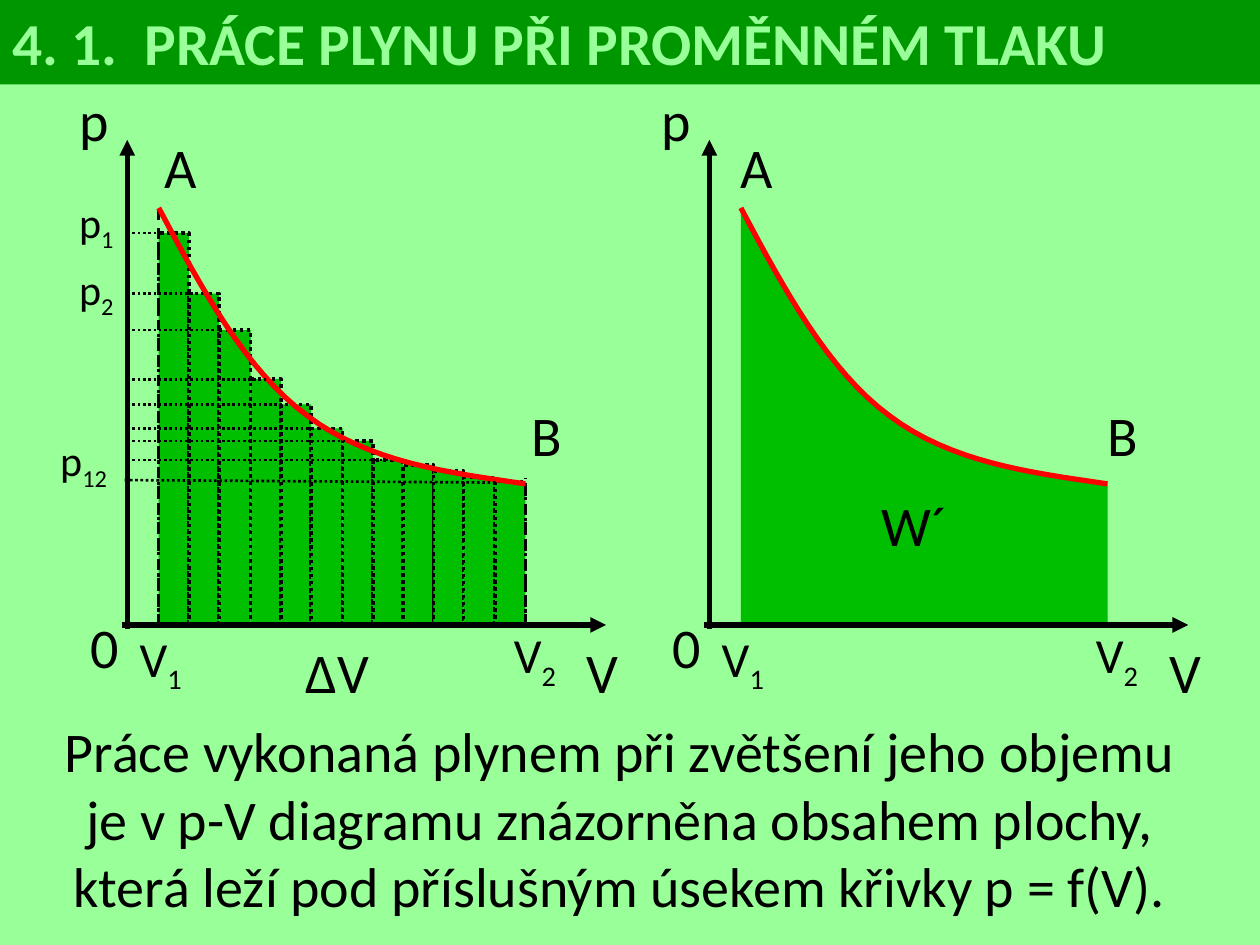
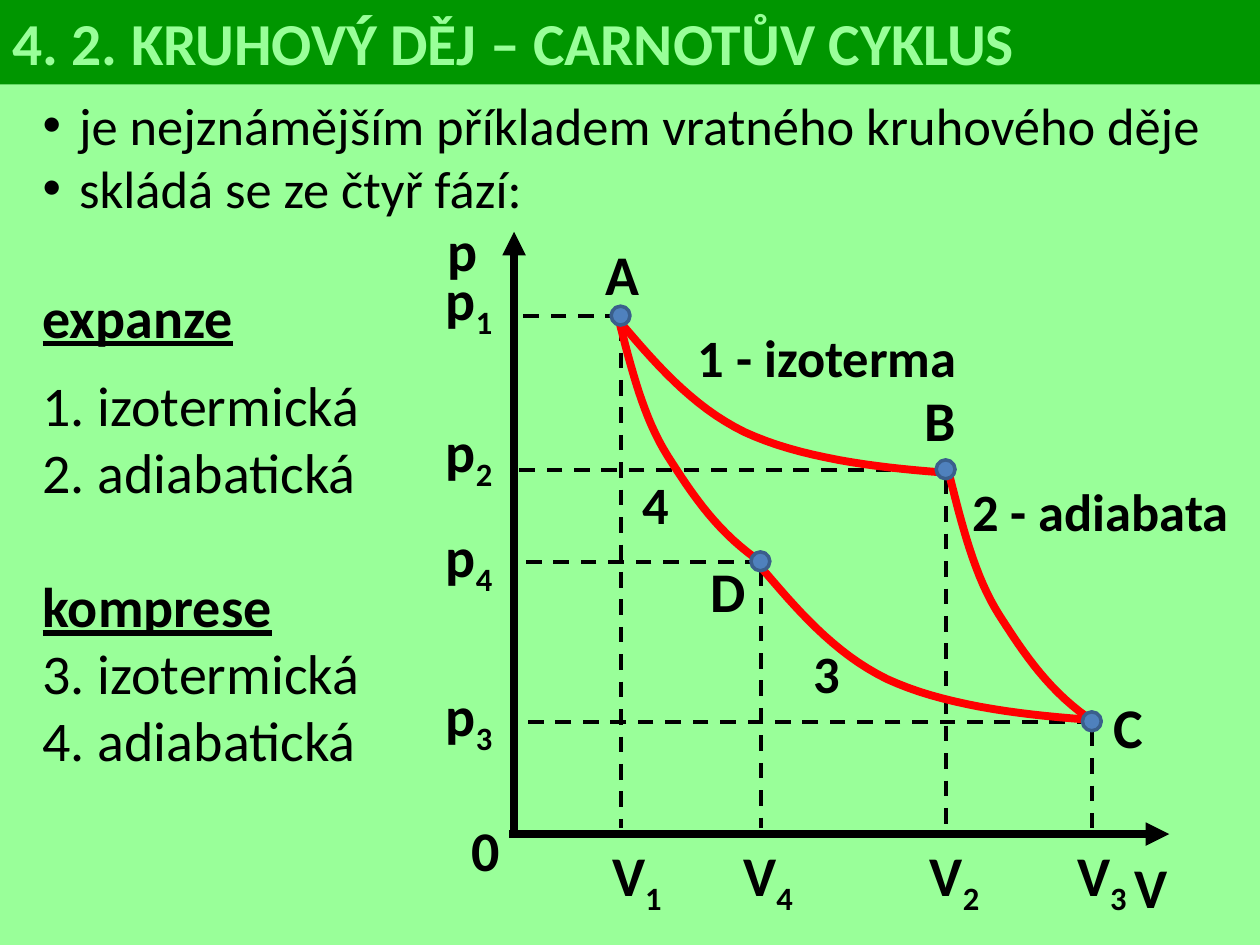
from dataclasses import dataclass

from lxml import etree
from pptx import Presentation
from pptx import util as u
from pptx.dml.color import RGBColor
from pptx.enum import dml, shapes, text
from pptx.oxml.ns import qn

PX = 9144  # EMU in one px; a page is 1000 x 750 px
Point = tuple[int, int]


@dataclass(frozen=True)
class Theme:
    font: str = "Calibri"
    page: str = "99FF99"
    band: str = "009600"
    ink: str = "000000"
    area: str = "00BE00"
    curve: str = "FF0000"
    dot: str = "4F81BD"
    dot_edge: str = "3A5F8C"
    title: int = 34
    body: int = 32
    note: int = 30
    volume: int = 28
    pressure: int = 24


@dataclass(frozen=True)
class Label:
    text: str
    x: int
    y: int
    width: int = 54
    sub: str = ""
    size: int = 32
    bold: bool = False


@dataclass(frozen=True)
class Stroke:
    color: str
    width: float
    dash: dml.MSO_LINE | None = None
    arrow: bool = False


@dataclass(frozen=True)
class Item:
    text: str
    size: int = 32
    heading: bool = False
    bullet: bool = False
    gap: int = 0


@dataclass(frozen=True)
class State:
    """A corner of the cycle, with the places of its labels."""
    name: str
    sub: str
    x: int
    y: int
    name_at: Point
    volume_x: int
    pressure_y: int


THEME = Theme()
DOTTED = dml.MSO_LINE.ROUND_DOT
DASHED = dml.MSO_LINE.DASH

# Bézier points, relative to the start of each curve
EXPANSION = [(0, 0), (34, 64), (69, 129), (118, 165), (167, 202), (229, 210), (291, 219)]
ISOTHERM = [(0, 0), (30, 35), (59, 70), (102, 91), (145, 111), (204, 119), (259, 123)]
ADIABAT = [(0, 0), (11, 44), (21, 83), (40, 113), (60, 144), (80, 175), (117, 199)]

WORK_START = (126, 165)
WORK_BASE = 496
DIAGRAM_SHIFT = 462
BAR_TOPS = [185, 233, 262, 301, 321, 340, 350, 365, 369, 374, 379, 382]
GUIDE_ENDS = [126, 162, 174, 211, 223, 247, 276, 308]
DIAGRAM_LABELS = [
    Label("p", 53, 63),
    Label("V", 456, 501),
    Label("0", 62, 481),
    Label("V", 101, 494, 73, "1", THEME.volume),
    Label("V", 398, 491, 73, "2", THEME.volume),
]
WORK_LABELS = [
    Label("A", 121, 100),
    Label("B", 412, 313),
    Label("A", 578, 100),
    Label("B", 869, 313),
    Label("∆V", 233, 501, 83),
    Label("W´", 690, 384, 83),
    Label("p", 53, 151, 53, "1", THEME.pressure),
    Label("p", 53, 204, 53, "2", THEME.pressure),
    Label("p", 38, 340, 63, "12", THEME.pressure),
]
WORK_SUMMARY = (
    "Práce vykonaná plynem při zvětšení jeho objemu je v\u00a0p-V diagramu znázorněna "
    "obsahem plochy, která leží pod příslušným úsekem křivky p = f(V)."
)

STATES = [
    State("A", "1", 493, 251, (471, 185), 476, 205),
    State("B", "2", 751, 373, (724, 301), 728, 326),
    State("C", "3", 867, 573, (874, 545), 845, 535),
    State("D", "4", 604, 446, (554, 437), 580, 409),
]
CYCLE_LABELS = [
    Label("p", 345, 166, 73, bold=True),
    Label("0", 364, 642, 74, bold=True),
    Label("V", 891, 672, 100, bold=True),
    Label("1 - izoterma", 544, 253, 277, size=THEME.note, bold=True),
    Label("2 - adiabata", 762, 375, 238, size=THEME.note, bold=True),
    Label("3", 636, 504, 58, size=THEME.note, bold=True),
    Label("4", 500, 370, 58, size=THEME.note, bold=True),
]
CYCLE_ITEMS = [
    Item("je nejznámějším příkladem vratného kruhového děje", THEME.note, bullet=True),
    Item("skládá se ze čtyř fází:", THEME.note, bullet=True),
    Item("expanze", heading=True, gap=36),
    Item("1. izotermická", gap=12),
    Item("2. adiabatická"),
    Item("komprese", heading=True, gap=38),
    Item("3. izotermická"),
    Item("4. adiabatická"),
]


def px(length: float) -> u.Emu:
    return u.Emu(round(length * PX))


def rgb(value: str) -> RGBColor:
    return RGBColor.from_string(value)


def style_font(span, size: int, bold: bool = False, color: str = THEME.ink) -> None:
    span.font.name = THEME.font
    span.font.size = u.Pt(size)
    span.font.bold = bold
    span.font.color.rgb = rgb(color)


def apply_stroke(line, stroke: Stroke) -> None:
    line.color.rgb = rgb(stroke.color)
    line.width = u.Pt(stroke.width)
    if stroke.dash is not None:
        line.dash_style = stroke.dash


def add_line(page, start: Point, end: Point, stroke: Stroke) -> None:
    line = page.shapes.add_connector(
        shapes.MSO_CONNECTOR.STRAIGHT, *(px(v) for v in (*start, *end)))
    apply_stroke(line.line, stroke)
    properties = line._element.spPr
    if stroke.arrow:
        etree.SubElement(properties.find(qn("a:ln")), qn("a:tailEnd"), type="triangle")
    etree.SubElement(properties, qn("a:effectLst"))


def add_filled(page, kind, frame: tuple[int, int, int, int], color: str,
               stroke: Stroke | None = None):
    shape = page.shapes.add_shape(kind, *(px(v) for v in frame))
    shape.shadow.inherit = False
    shape.fill.solid()
    shape.fill.fore_color.rgb = rgb(color)
    if stroke:
        apply_stroke(shape.line, stroke)
    else:
        shape.line.fill.background()
    return shape


def bezier_points(start: Point, controls: list[Point], steps: int = 16) -> list[tuple[float, float]]:
    """Sample joined cubic curves whose control points are relative to start."""
    places = [(start[0] + x, start[1] + y) for x, y in controls]
    points = [places[0]]
    for first in range(0, len(places) - 1, 3):
        corners = places[first:first + 4]
        for step in range(1, steps + 1):
            t = step / steps
            weights = ((1 - t) ** 3, 3 * t * (1 - t) ** 2, 3 * t * t * (1 - t), t ** 3)
            points.append(tuple(
                sum(w * corner[axis] for w, corner in zip(weights, corners))
                for axis in (0, 1)))
    return points


def add_outline(page, points, closed: bool = False):
    places = [(px(x), px(y)) for x, y in points]
    builder = page.shapes.build_freeform(*places[0])
    builder.add_line_segments(places[1:], close=closed)
    shape = builder.convert_to_shape()
    shape.shadow.inherit = False
    return shape


def add_curve(page, start: Point, controls: list[Point], width: float) -> None:
    shape = add_outline(page, bezier_points(start, controls))
    shape.fill.background()
    apply_stroke(shape.line, Stroke(THEME.curve, width))


def add_area(page, start: Point, controls: list[Point], base: int) -> None:
    """Fill the space between a curve and the volume axis."""
    points = bezier_points(start, controls)
    points += [(points[-1][0], base), (start[0], base)]
    shape = add_outline(page, points, closed=True)
    shape.fill.solid()
    shape.fill.fore_color.rgb = rgb(THEME.area)
    shape.line.fill.background()


def add_box(page, x: int, y: int, width: int, height: int):
    box = page.shapes.add_textbox(px(x), px(y), px(width), px(height))
    box.text_frame.word_wrap = True
    return box


def add_label(page, label: Label, shift: int = 0) -> None:
    height = round(label.size * 1.7 + 10)
    box = add_box(page, label.x + shift, label.y, label.width, height)
    para = box.text_frame.paragraphs[0]
    para.text = label.text
    if label.sub:
        span = para.add_run()
        span.text = label.sub
        span._r.get_or_add_rPr().set("baseline", "-25000")
    for span in para.runs:
        style_font(span, label.size, label.bold)


def add_bullet(para, indent: int) -> None:
    properties = para._p.get_or_add_pPr()
    properties.set("marL", str(px(indent)))
    properties.set("indent", str(-px(indent)))
    etree.SubElement(properties, qn("a:buFont"), typeface="Arial")
    etree.SubElement(properties, qn("a:buChar"), char="•")


def add_items(page, items: list[Item]) -> None:
    frame = add_box(page, 24, 69, 953, 660).text_frame
    frame.text = "\n".join(item.text for item in items)
    for para, item in zip(frame.paragraphs, items):
        para.space_before = u.Pt(item.gap)
        span = para.runs[0]
        style_font(span, item.size, item.heading)
        span.font.underline = item.heading
        if item.bullet:
            add_bullet(para, 29)


def add_page(deck, title: str):
    page = deck.slides.add_slide(deck.slide_layouts[6])
    page.background.fill.solid()
    page.background.fill.fore_color.rgb = rgb(THEME.page)
    band = add_filled(page, shapes.MSO_SHAPE.RECTANGLE, (0, 0, 1000, 67), THEME.band)
    band.text_frame.text = title
    para = band.text_frame.paragraphs[0]
    para.alignment = text.PP_ALIGN.LEFT
    style_font(para.runs[0], THEME.title, True, THEME.page)
    return page


def add_axes(page, origin: Point, top: int, right: int, width: float) -> None:
    x, y = origin
    stroke = Stroke(THEME.ink, width, arrow=True)
    add_line(page, (x, y + 3), (x, top), stroke)
    add_line(page, (x - 4, y), (right, y), stroke)


def add_bars(page) -> None:
    left, span = WORK_START[0], EXPANSION[-1][0]
    edges = [round(left + span * i / len(BAR_TOPS)) for i in range(len(BAR_TOPS) + 1)]
    for x, end, top in zip(edges, edges[1:], BAR_TOPS):
        add_filled(page, shapes.MSO_SHAPE.RECTANGLE, (x, top, end - x, WORK_BASE - top),
                   THEME.area, Stroke(THEME.ink, 2, DOTTED))


def build_work_page(deck) -> None:
    page = add_page(deck, "4. 1.  PRÁCE PLYNU PŘI PROMĚNNÉM TLAKU")
    x, y = WORK_START
    add_bars(page)
    add_area(page, (x + DIAGRAM_SHIFT, y), EXPANSION, WORK_BASE)
    for edge, top in ((x, y), (x + EXPANSION[-1][0], 379)):
        add_line(page, (edge, WORK_BASE), (edge, top), Stroke(THEME.ink, 1.5, DASHED))
    for shift in (0, DIAGRAM_SHIFT):
        add_axes(page, (101 + shift, WORK_BASE), 111, 481 + shift, 3)
        add_curve(page, (x + shift, y), EXPANSION, 3)
        for label in DIAGRAM_LABELS:
            add_label(page, label, shift)
    guide = Stroke(THEME.ink, 1.5, DOTTED)
    for top, end in zip(BAR_TOPS, GUIDE_ENDS):
        add_line(page, (101, top), (end, top), guide)
    add_line(page, (99, 381), (394, 383), guide)
    for label in WORK_LABELS:
        add_label(page, label)
    summary = add_box(page, 39, 564, 906, 172)
    summary.text_frame.text = WORK_SUMMARY
    para = summary.text_frame.paragraphs[0]
    para.alignment = text.PP_ALIGN.CENTER
    style_font(para.runs[0], THEME.body)


def build_cycle_page(deck) -> None:
    page = add_page(deck, "4. 2. KRUHOVÝ DĚJ – CARNOTŮV CYKLUS")
    add_items(page, CYCLE_ITEMS)
    guide = Stroke(THEME.ink, 2.25, DASHED)
    for state in STATES:
        add_line(page, (state.x, state.y + 7), (state.x, 657), guide)
        add_line(page, (state.x, state.y), (408, state.y), guide)
    add_axes(page, (408, 662), 184, 928, 4.5)
    for start, controls in (((490, 249), ADIABAT), ((753, 375), ADIABAT),
                            ((489, 252), ISOTHERM), ((602, 448), ISOTHERM)):
        add_curve(page, start, controls, 4.5)
    for state in STATES:
        add_filled(page, shapes.MSO_SHAPE.OVAL, (state.x - 8, state.y - 8, 15, 15),
                   THEME.dot, Stroke(THEME.dot_edge, 2))
        add_label(page, Label(state.name, *state.name_at, 73, bold=True))
        add_label(page, Label("V", state.volume_x, 662, 100, state.sub, bold=True))
        add_label(page, Label("p", 344, state.pressure_y, 100, state.sub, bold=True))
    for label in CYCLE_LABELS:
        add_label(page, label)


def main() -> None:
    deck = Presentation()
    deck.slide_width, deck.slide_height = px(1000), px(750)
    build_work_page(deck)
    build_cycle_page(deck)
    deck.save("out.pptx")


if __name__ == "__main__":
    main()
